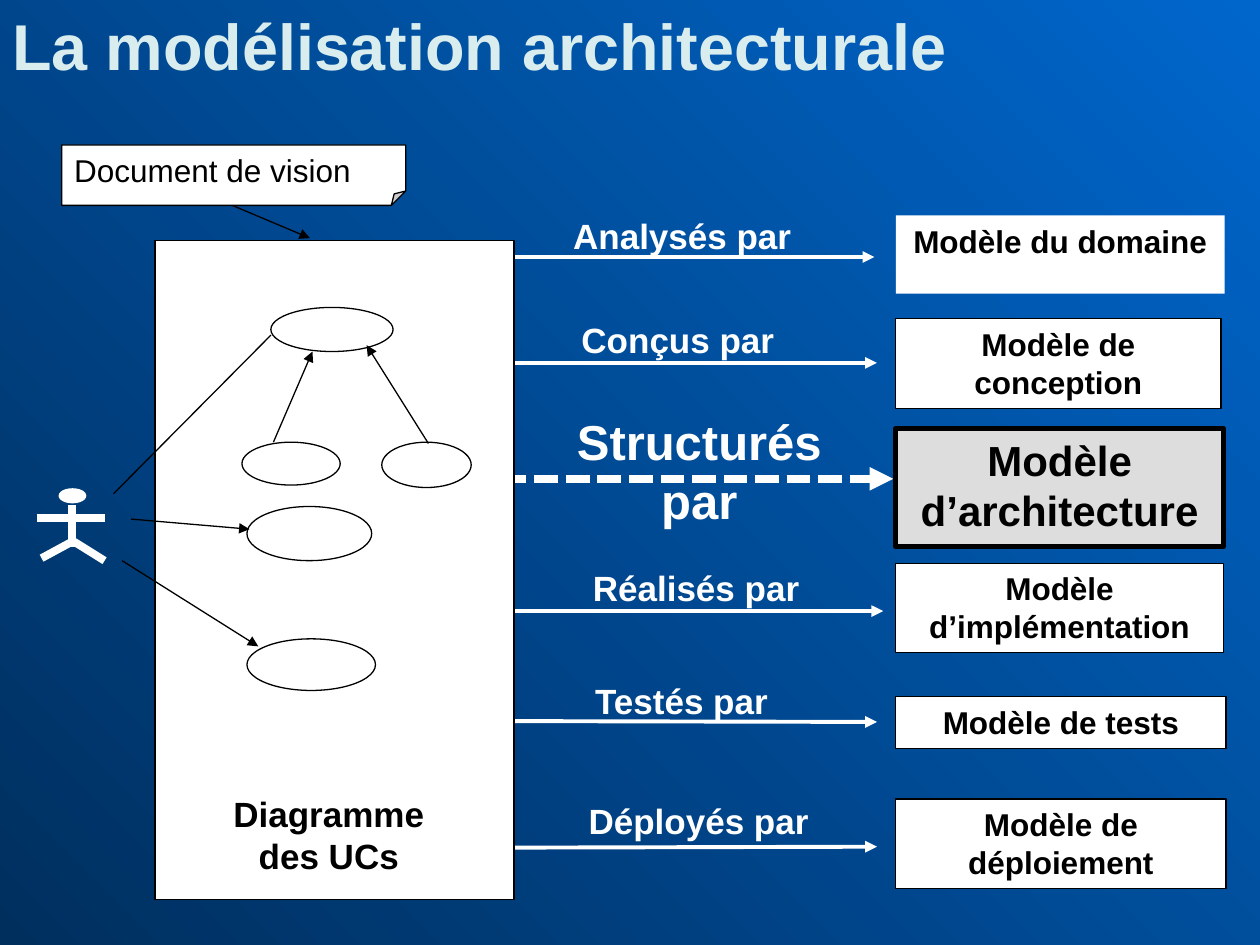
from dataclasses import dataclass

from lxml.etree import SubElement
from pptx import Presentation
from pptx.dml.color import RGBColor
from pptx.enum.dml import MSO_LINE
from pptx.enum.shapes import MSO_CONNECTOR, MSO_SHAPE
from pptx.enum.text import MSO_ANCHOR, PP_ALIGN
from pptx.oxml.ns import qn
from pptx.util import Inches, Pt

COLORS = {
    "night": "002F5E",
    "blue": "0066CC",
    "title": "D9EDEF",
    "white": "FFFFFF",
    "black": "000000",
    "gray": "DDDDDD",
}
MODEL_LEFT = 7.11


@dataclass
class Line:
    start: tuple[float, float]
    end: tuple[float, float]
    color: str = "black"
    width: float = 0.75
    arrow: bool = True
    dotted: bool = False


@dataclass
class Label:
    text: str
    box: tuple[float, float, float, float]
    size: float = 20
    color: str = "white"
    align: PP_ALIGN = PP_ALIGN.CENTER


@dataclass
class Model:
    text: str
    top: float
    width: float
    height: float
    size: float = 18
    fill: str = "white"
    border: float = 0.75


FLOWS = [
    Line((2.99, 6.73), (6.96, 6.72), "white", 2.25),
    Line((3.84, 4.85), (7.01, 4.85), "white", 2.25),
    Line((2.96, 2.88), (6.96, 2.88), "white", 2.25),
    Line((3.62, 2.04), (6.94, 2.04), "white", 2.25),
    Line((2.68, 5.72), (6.96, 5.73), "white", 2.25),
    Line((3.74, 3.8), (7.09, 3.8), "white", 4.5, dotted=True),
]
MODELS = [
    Model("Modèle du domaine", 1.71, 2.61, 0.62, border=0),
    Model("Modèle de conception", 2.53, 2.58, 0.71),
    Model("Modèle d’architecture", 3.4, 2.6, 0.94, 24, "gray", 3),
    Model("Modèle d’implémentation", 4.47, 2.6, 0.71),
    Model("Modèle de tests", 5.53, 2.62, 0.41),
    Model("Modèle de déploiement", 6.34, 2.62, 0.71),
]
USE_CASES = [
    (2.15, 2.44, 0.97, 0.35),
    (1.92, 3.51, 0.78, 0.34),
    (3.03, 3.51, 0.71, 0.36),
    (1.96, 4.02, 0.99, 0.43),
    (1.96, 5.07, 1.02, 0.41),
]
USE_CASE_LINKS = [
    Line((2.17, 3.51), (2.48, 2.79)),
    Line((3.4, 3.52), (2.91, 2.74)),
    Line((0.9, 3.92), (2.15, 2.66), arrow=False),
    Line((1.04, 4.12), (1.98, 4.2)),
    Line((0.97, 4.45), (2.05, 5.13)),
]
ACTOR_LIMBS = [
    ((0.57, 4.01), (0.57, 4.34)),
    ((0.29, 4.11), (0.83, 4.11)),
    ((0.57, 4.3), (0.33, 4.43)),
    ((0.59, 4.3), (0.83, 4.45)),
]
LABELS = [
    Label("La modélisation architecturale", (0, 0, 10, 0.72), 37, "title", PP_ALIGN.LEFT),
    Label("Analysés par", (4.33, 1.65, 2.17, 0.43)),
    Label("Conçus par", (4.49, 2.48, 1.78, 0.43)),
    Label("Structurés par", (4.41, 3.22, 2.28, 1.03), 28),
    Label("Réalisés par", (4.35, 4.45, 2.35, 0.43)),
    Label("Testés par", (4.53, 5.34, 1.76, 0.43)),
    Label("Déployés par", (4.55, 6.3, 1.99, 0.43)),
    Label("Diagramme des UCs", (1.54, 6.24, 2.14, 0.77), 20, "black"),
]


def rgb(name: str) -> RGBColor:
    """Return a named colour."""
    return RGBColor.from_string(COLORS[name])


def write(shape, text: str, size: float, color: str, align=PP_ALIGN.CENTER, bold=True) -> None:
    """Write one paragraph at the top of a shape."""
    frame = shape.text_frame
    frame.word_wrap = True
    frame.vertical_anchor = MSO_ANCHOR.TOP
    paragraph = frame.paragraphs[0]
    paragraph.alignment = align
    run = paragraph.add_run()
    run.text = text
    run.font.name = "Arial"
    run.font.size = Pt(size)
    run.font.bold = bold
    run.font.color.rgb = rgb(color)


def add_box(shapes, kind, box, fill="white", border="black", width=0.75):
    """Add a filled shape, outlined when the width is above zero."""
    shape = shapes.add_shape(kind, *map(Inches, box))
    shape.shadow.inherit = False
    shape.fill.solid()
    shape.fill.fore_color.rgb = rgb(fill)
    if width:
        shape.line.color.rgb = rgb(border)
        shape.line.width = Pt(width)
    else:
        shape.line.fill.background()
    return shape


def add_line(shapes, line: Line) -> None:
    """Add a straight line, dotted or with an arrowhead if asked."""
    ends = map(Inches, (*line.start, *line.end))
    connector = shapes.add_connector(MSO_CONNECTOR.STRAIGHT, *ends)
    connector.line.color.rgb = rgb(line.color)
    connector.line.width = Pt(line.width)
    if line.dotted:
        connector.line.dash_style = MSO_LINE.SQUARE_DOT
    if line.arrow:
        outline = connector._element.spPr.find(qn("a:ln"))
        SubElement(outline, qn("a:tailEnd"), type="triangle")
    SubElement(connector._element.spPr, qn("a:effectLst"))


def add_label(shapes, label: Label) -> None:
    """Add a bold text box."""
    text_box = shapes.add_textbox(*map(Inches, label.box))
    write(text_box, label.text, label.size, label.color, label.align)


def add_model(shapes, model: Model) -> None:
    """Add a model box in the right column."""
    box = (MODEL_LEFT, model.top, model.width, model.height)
    shape = add_box(shapes, MSO_SHAPE.RECTANGLE, box, model.fill, width=model.border)
    write(shape, model.text, model.size, "black")


def add_actor(shapes) -> None:
    """Add the stick figure as a group."""
    group = shapes.add_group_shape()
    add_box(group.shapes, MSO_SHAPE.OVAL, (0.47, 3.88, 0.21, 0.11), border="white")
    for start, end in ACTOR_LIMBS:
        add_line(group.shapes, Line(start, end, "white", 4.5, arrow=False))


def add_note(shapes) -> None:
    """Add the vision document note with its folded corner."""
    note = add_box(shapes, MSO_SHAPE.FOLDED_CORNER, (0.49, 1.15, 2.73, 0.48))
    guides = next(note._element.spPr.iter(qn("a:avLst")))
    SubElement(guides, qn("a:gd"), name="adj", fmla="val 23700")
    write(note, "Document de vision", 18, "black", PP_ALIGN.LEFT, bold=False)


def main() -> None:
    """Build and save the slide."""
    presentation = Presentation()
    presentation.slide_width, presentation.slide_height = Inches(10), Inches(7.5)
    slide = presentation.slides.add_slide(presentation.slide_layouts[6])
    fill = slide.background.fill
    fill.gradient()
    fill.gradient_angle = 45
    for stop, name in zip(fill.gradient_stops, ("night", "blue")):
        stop.color.rgb = rgb(name)
    shapes = slide.shapes
    for line in [Line((1.44, 1.46), (2.46, 1.89)), *FLOWS]:
        add_line(shapes, line)
    for model in MODELS:
        add_model(shapes, model)
    add_box(shapes, MSO_SHAPE.RECTANGLE, (1.23, 1.91, 2.85, 5.23))
    for use_case in USE_CASES:
        add_box(shapes, MSO_SHAPE.OVAL, use_case)
    for link in USE_CASE_LINKS:
        add_line(shapes, link)
    add_actor(shapes)
    add_note(shapes)
    for label in LABELS:
        add_label(shapes, label)
    presentation.save("out.pptx")


if __name__ == "__main__":
    main()
